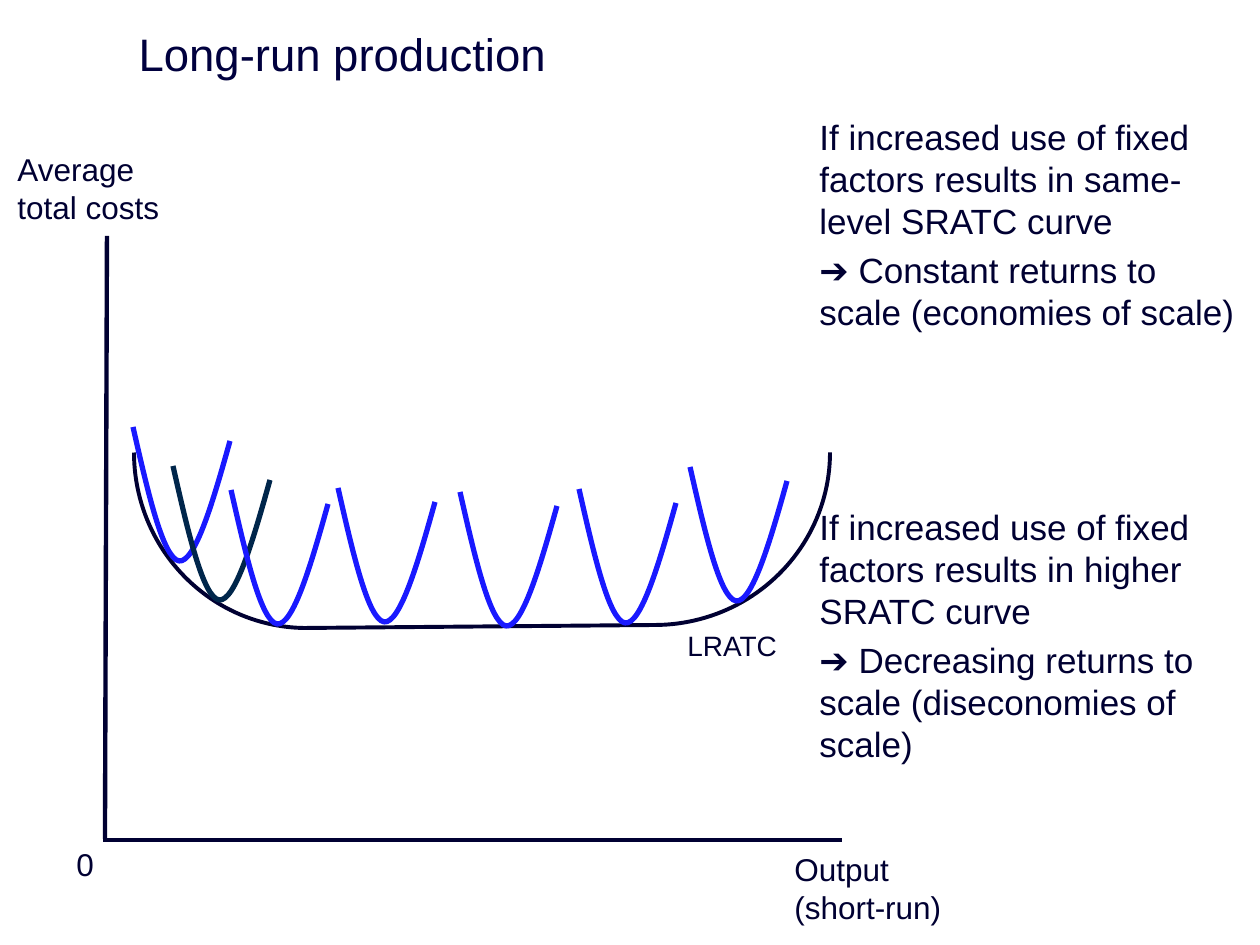
from dataclasses import dataclass

from lxml import etree
from pptx import Presentation
from pptx import util as u
from pptx.dml.color import RGBColor
from pptx.enum import shapes, text
from pptx.oxml.ns import qn

SCALE = 914400 / 126


@dataclass(frozen=True)
class Theme:
    font: str = "Arial"
    heading: str = "00003E"
    ink: str = "000032"
    curve: str = "1919FF"
    dark_curve: str = "00264B"
    title_size: int = 26
    body_size: int = 20
    label_size: int = 18
    small_size: int = 16
    axis_line: float = 2.5
    long_run_line: float = 2.25
    short_run_line: float = 3


THEME = Theme()

TITLE = ("Long-run production", (126, 21, 1134, 64))
RETURNS = [
    ("If increased use of fixed factors results in same-level SRATC curve", 0),
    ("➔ Constant returns to scale (economies of scale)", 4),
    ("If increased use of fixed factors results in higher SRATC curve", 99),
    ("➔ Decreasing returns to scale (diseconomies of scale)", 4),
]
RETURNS_AREA = (807, 109, 448, 624)
LABELS = [
    (["Output", "(short-run)"], (782, 844, 178, 89), THEME.label_size),
    (["0"], (64, 839, 81, 50), THEME.label_size),
    (["Average total costs"], (5, 144, 195, 89), THEME.label_size),
    (["LRATC"], (675, 622, 118, 47), THEME.small_size),
]
LINES = [
    ((107, 236), (105, 839), THEME.axis_line),
    ((842, 840), (103, 840), THEME.axis_line),
    ((655, 625), (306, 628), THEME.long_run_line),
]
ARCS = [((134, 277, 345, 351), 180), ((482, 277, 345, 351), 90)]
SHORT_RUN_STARTS = [
    (133, 427, THEME.curve),
    (173, 466, THEME.dark_curve),
    (231, 490, THEME.curve),
    (338, 488, THEME.curve),
    (460, 492, THEME.curve),
    (579, 489, THEME.curve),
    (690, 467, THEME.curve),
]
SHORT_RUN_CONTROLS = [
    (15, 66), (30, 131), (46, 134),
    (62, 136), (80, 75), (97, 14),
]


def px(*values):
    return [u.Emu(round(value * SCALE)) for value in values]


def write(box, paragraphs, size, color=THEME.ink, anchor=text.MSO_ANCHOR.TOP):
    frame = box.text_frame
    frame.word_wrap = True
    frame.auto_size = text.MSO_AUTO_SIZE.NONE
    frame.vertical_anchor = anchor
    for index, (words, gap) in enumerate(paragraphs):
        para = frame.add_paragraph() if index else frame.paragraphs[0]
        para.alignment = text.PP_ALIGN.LEFT
        para.space_before = u.Pt(gap)
        span = para.add_run()
        span.text = words
        span.font.name = THEME.font
        span.font.size = u.Pt(size)
        span.font.color.rgb = RGBColor.from_string(color)


def stroke(shape, width, color=THEME.ink):
    shape.line.color.rgb = RGBColor.from_string(color)
    shape.line.width = u.Pt(width)


def add_line(page, start, end, width):
    line = page.shapes.add_connector(
        shapes.MSO_CONNECTOR.STRAIGHT, *px(*start, *end))
    etree.SubElement(line._element.spPr, qn("a:effectLst"))
    stroke(line, width)


def add_arc(page, area, rotation):
    arc = page.shapes.add_shape(shapes.MSO_SHAPE.ARC, *px(*area))
    arc.rotation = rotation
    arc.shadow.inherit = False
    arc.fill.background()
    stroke(arc, THEME.long_run_line)


def bend_segments(shape):
    segments = list(shape._element.iter(qn("a:lnTo")))
    for first in range(0, len(segments), 3):
        bend = etree.Element(qn("a:cubicBezTo"))
        segments[first].addprevious(bend)
        for segment in segments[first:first + 3]:
            bend.append(segment[0])
            segment.getparent().remove(segment)


def add_short_run_curve(page, left, top, color):
    builder = page.shapes.build_freeform(*px(left, top))
    builder.add_line_segments(
        [px(left + x, top + y) for x, y in SHORT_RUN_CONTROLS], close=False)
    curve = builder.convert_to_shape()
    bend_segments(curve)
    curve.shadow.inherit = False
    curve.fill.background()
    stroke(curve, THEME.short_run_line, color)


def main():
    deck = Presentation()
    deck.slide_width, deck.slide_height = px(1260, 945)
    page = deck.slides.add_slide(deck.slide_layouts[5])

    words, area = TITLE
    title = page.shapes.title
    title.left, title.top, title.width, title.height = px(*area)
    write(title, [(words, 0)], THEME.title_size, color=THEME.heading,
          anchor=text.MSO_ANCHOR.MIDDLE)

    write(page.shapes.add_textbox(*px(*RETURNS_AREA)), RETURNS, THEME.body_size)
    for lines, area, size in LABELS:
        write(page.shapes.add_textbox(*px(*area)),
              [(line, 0) for line in lines], size)
    for start, end, width in LINES:
        add_line(page, start, end, width)
    for area, rotation in ARCS:
        add_arc(page, area, rotation)
    for left, top, color in SHORT_RUN_STARTS:
        add_short_run_curve(page, left, top, color)

    deck.save("out.pptx")


if __name__ == "__main__":
    main()
